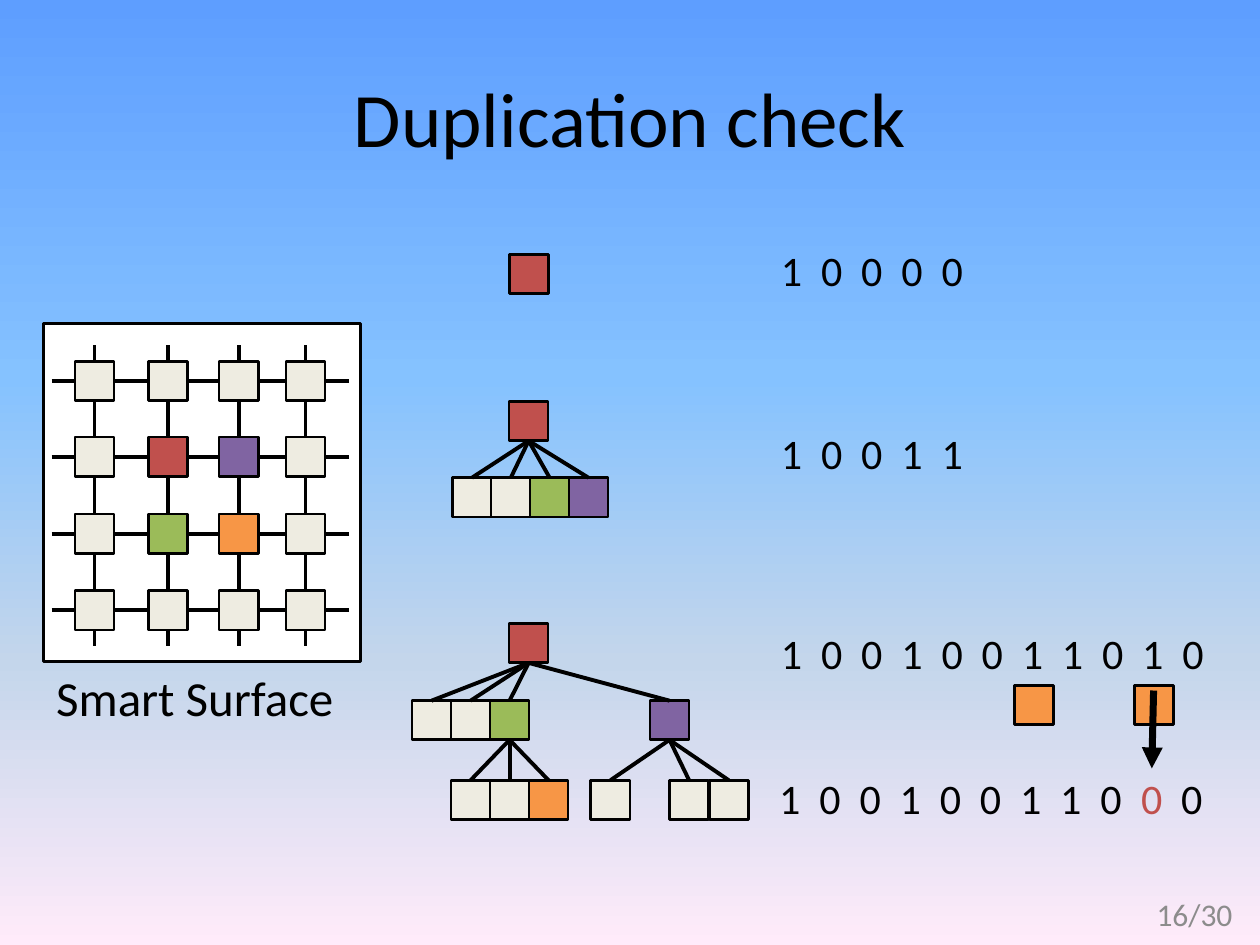
from lxml import etree
from pptx import Presentation
from pptx.dml.color import RGBColor
from pptx.enum import shapes, text
from pptx.oxml import ns
from pptx.util import Pt

BLACK = RGBColor(0x00, 0x00, 0x00)
WHITE = RGBColor(0xFF, 0xFF, 0xFF)
GRAY = RGBColor(0x8C, 0x8C, 0x8C)
CREAM = RGBColor(0xEE, 0xEC, 0xE1)
RED = RGBColor(0xC0, 0x50, 0x4D)
GREEN = RGBColor(0x9B, 0xBB, 0x59)
VIOLET = RGBColor(0x80, 0x64, 0xA2)
ORANGE = RGBColor(0xF7, 0x96, 0x46)
SKY = [(0, RGBColor(0x5E, 0x9E, 0xFF)), (40, RGBColor(0x85, 0xC2, 0xFF)),
       (70, RGBColor(0xC4, 0xD6, 0xEB)), (100, RGBColor(0xFF, 0xEB, 0xFA))]
SIDE = 22.4
TOP, LEFT, BOTTOM, RIGHT = range(4)


def apply(obj, vals):
    for key, val in vals.items():
        setattr(obj, key, val)


def paint(slide):
    fill = slide.background.fill
    fill.gradient()
    fill.gradient_angle = 270
    stops = slide.element.find(".//" + ns.qn("a:gsLst"))
    for old in list(stops):
        stops.remove(old)
    for pos, color in SKY:
        stop = etree.SubElement(stops, ns.qn("a:gs"), pos=str(pos * 1000))
        etree.SubElement(stop, ns.qn("a:srgbClr"), val=str(color))


def rect(slide, box, color):
    shape = slide.shapes.add_shape(shapes.MSO_SHAPE.RECTANGLE, *map(Pt, box))
    shape.shadow.inherit = False
    shape.fill.solid()
    shape.fill.fore_color.rgb = color
    shape.line.color.rgb = BLACK
    shape.line.width = Pt(1.5)
    return shape


def cell(slide, x, y, color):
    return rect(slide, (x, y, SIDE, SIDE), color)


def wire(slide, ends=(0, 0, 0, 0), width=2.25):
    line = slide.shapes.add_connector(shapes.MSO_CONNECTOR.STRAIGHT, *map(Pt, ends))
    line.line.color.rgb = BLACK
    line.line.width = Pt(width)
    etree.SubElement(line._element.spPr, ns.qn("a:effectLst"))
    return line


def join(slide, start, out, end, into):
    line = wire(slide)
    line.begin_connect(start, out)
    line.end_connect(end, into)


def label(slide, box, runs, size, align="LEFT", anchor="TOP", gap=0):
    frame = slide.shapes.add_textbox(*map(Pt, box)).text_frame
    apply(frame, {"word_wrap": True,
                  "vertical_anchor": getattr(text.MSO_ANCHOR, anchor)})
    para = frame.paragraphs[0]
    para.alignment = getattr(text.PP_ALIGN, align)
    for words, color in runs:
        run = para.add_run()
        run.text = words
        apply(run.font, {"name": "Calibri", "size": Pt(size)})
        run.font.color.rgb = color
        if gap:
            run.font._element.set("spc", str(int(gap * 100)))


def surface(slide, box):
    x, y, w, h = box
    rect(slide, box, WHITE)
    cols = [x + dx for dx in (29, 71, 111.4, 149.6)]
    rows = [y + dy for dy in (32.8, 76, 120, 163.8)]
    tints = {(1, 1): RED, (1, 2): VIOLET, (2, 1): GREEN, (2, 2): ORANGE}
    grid = [[cell(slide, cx - SIDE / 2, cy - SIDE / 2, tints.get((r, c), CREAM))
             for c, cx in enumerate(cols)] for r, cy in enumerate(rows)]

    def stub(px, py, node, side):
        wire(slide, (px, py, px, py)).end_connect(node, side)

    for row, cy in zip(grid, rows):
        stub(x + 4.5, cy, row[0], LEFT)
        stub(x + w - 6.5, cy, row[-1], RIGHT)
        for a, b in zip(row, row[1:]):
            join(slide, a, RIGHT, b, LEFT)
    for col, cx in zip(zip(*grid), cols):
        stub(cx, y + 12.3, col[0], TOP)
        stub(cx, y + h - 9, col[-1], BOTTOM)
        for a, b in zip(col, col[1:]):
            join(slide, a, BOTTOM, b, TOP)

    label(slide, (x, y + h, w, 41), [("Smart Surface", BLACK)], 28)


def tree(slide, box, nodes):
    x, y = box
    made = []
    for top, dx, dy, color in nodes:
        made.append(cell(slide, x + dx, y + dy, color))
        if top is not None:
            join(slide, made[top], BOTTOM, made[-1], TOP)


def codes(slide, box):
    x, y, w = box
    bits = "1 0 0 1 0 0 1 1 0 "
    rows = [(0, 0, [("1 0 0 0 0", BLACK)]),
            (0, 104.5, [("1 0 0 1 1", BLACK)]),
            (0, 219, [(bits + "1 0", BLACK)]),
            (-1, 301.7, [(bits, BLACK), ("0", RED), (" 0", BLACK)])]
    for dx, dy, runs in rows:
        label(slide, (x + dx, y + dy, w, 36), runs, 24, gap=2.7)
    for dx in (140.4, 209):
        cell(slide, x + dx, y + 255.5, ORANGE)
    arrow = wire(slide, (x + 220, y + 258.5, x + 219, y + 303), 4)
    etree.SubElement(arrow.line._get_or_add_ln(), ns.qn("a:tailEnd"), type="triangle")


def main():
    deck = Presentation()
    apply(deck, {"slide_width": Pt(720), "slide_height": Pt(540)})
    slide = deck.slides.add_slide(deck.slide_layouts[6])
    paint(slide)
    label(slide, (36, 21.6, 648, 90), [("Duplication check", BLACK)], 44, "CENTER", "MIDDLE")
    surface(slide, (25, 185, 181, 193))
    tree(slide, (291, 145.4), [(None, 0, 0, RED)])
    kids = [CREAM, CREAM, GREEN, VIOLET]
    tree(slide, (258.5, 229.5), [(None, 32.4, 0, RED)]
         + [(0, 22.2 * i, 43.5, color) for i, color in enumerate(kids)])
    tree(slide, (235.4, 356.4), [(None, 55.5, 0, RED)]
         + [(0, dx, 44, color) for dx, color in zip((0, 22.3, 44.6, 136), kids)]
         + [(3, dx, 89.5, color) for dx, color in
            zip((22.3, 44.6, 66.9), (CREAM, CREAM, ORANGE))]
         + [(4, dx, 89.5, CREAM) for dx in (102.2, 147.2, 169.9)])
    codes(slide, (439.2, 136.1, 270.7))
    label(slide, (543.6, 507.6, 167.8, 28.8), [("16/30", GRAY)], 18, "RIGHT", "MIDDLE")
    deck.save("out.pptx")


if __name__ == "__main__":
    main()
